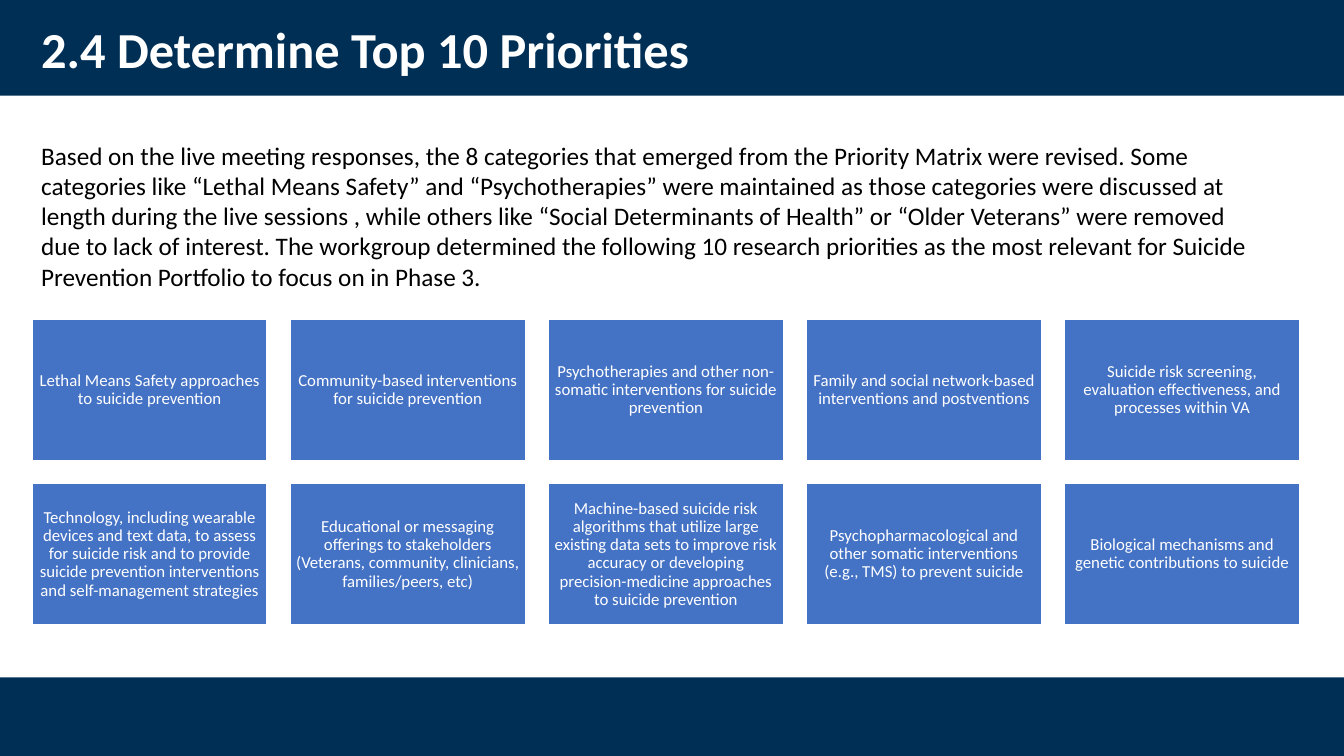
from pptx import Presentation
from pptx.dml.color import RGBColor
from pptx.enum import shapes, text
from pptx.util import Inches, Pt

TITLE = "2.4 Determine Top 10 Priorities"
INTRO = (
    "Based on the live meeting responses, the 8 categories that emerged from the "
    "Priority Matrix were revised. Some categories like “Lethal Means Safety” and "
    "“Psychotherapies” were maintained as those categories were discussed at length "
    "during the live sessions , while others like “Social Determinants of Health” or "
    "“Older Veterans” were removed due to lack of interest. The workgroup determined "
    "the following 10 research priorities as the most relevant for Suicide Prevention "
    "Portfolio to focus on in Phase 3."
)
PRIORITIES = [
    "Lethal Means Safety approaches to suicide prevention",
    "Community-based interventions for suicide prevention",
    "Psychotherapies and other non-somatic interventions for suicide prevention",
    "Family and social network-based interventions and postventions",
    "Suicide risk screening, evaluation effectiveness, and processes within VA",
    "Technology, including wearable devices and text data, to assess for suicide risk "
    "and to provide suicide prevention interventions and self-management strategies",
    "Educational or messaging offerings to stakeholders (Veterans, community, "
    "clinicians, families/peers, etc)",
    "Machine-based suicide risk algorithms that utilize large existing data sets to "
    "improve risk accuracy or developing precision-medicine approaches to suicide "
    "prevention",
    "Psychopharmacological and other somatic interventions (e.g., TMS) to prevent suicide",
    "Biological mechanisms and genetic contributions to suicide",
]

NAVY = RGBColor(0x00, 0x2F, 0x56)
BLUE = RGBColor(0x44, 0x72, 0xC4)
WHITE = RGBColor(0xFF, 0xFF, 0xFF)
BLACK = RGBColor(0x00, 0x00, 0x00)

SLIDE_W, SLIDE_H = 13.33, 7.5
BARS = [(0, 0.95), (6.72, 0.78)]
COLUMNS = 5
CARD_LEFT, CARD_TOP, CARD_W, CARD_H = 0.32, 3.17, 2.33, 1.4
GAP = 0.23

TITLE_FONT = {"name": "Calibri", "size": Pt(36), "bold": True, "color": WHITE}
INTRO_FONT = {"name": "Calibri", "size": Pt(18), "color": BLACK}
CARD_FONT = {"name": "Calibri", "size": Pt(12), "color": WHITE}
CARD_FRAME = {f"margin_{side}": Inches(0.05) for side in ("left", "top", "right", "bottom")}


def add_rect(slide, box, fill, line=None):
    sp = slide.shapes.add_shape(shapes.MSO_SHAPE.RECTANGLE, *map(Inches, box))
    sp.shadow.inherit = False
    sp.fill.solid()
    sp.fill.fore_color.rgb = fill
    if line is None:
        sp.line.fill.background()
    else:
        sp.line.color.rgb = line
        sp.line.width = Pt(1)
    return sp


def write(sp, words, font, anchor, align, spacing=1.0, frame=None):
    tf = sp.text_frame
    for key, value in {"word_wrap": True, "vertical_anchor": anchor, **(frame or {})}.items():
        setattr(tf, key, value)
    p = tf.paragraphs[0]
    p.alignment = align
    p.line_spacing = spacing
    r = p.add_run()
    r.text = words
    for key, value in font.items():
        if key == "color":
            r.font.color.rgb = value
        else:
            setattr(r.font, key, value)


def main():
    prs = Presentation()
    prs.slide_width, prs.slide_height = Inches(SLIDE_W), Inches(SLIDE_H)
    s = prs.slides.add_slide(prs.slide_layouts[6])
    middle, top = text.MSO_ANCHOR.MIDDLE, text.MSO_ANCHOR.TOP
    left, center = text.PP_ALIGN.LEFT, text.PP_ALIGN.CENTER

    for y, height in BARS:
        add_rect(s, (0, y, SLIDE_W, height), NAVY)

    title = s.shapes.add_textbox(*map(Inches, (0.31, 0.18, 12.58, 0.68)))
    write(title, TITLE, TITLE_FONT, middle, left, 0.9)

    for i, priority in enumerate(PRIORITIES):
        row, col = divmod(i, COLUMNS)
        x = CARD_LEFT + col * (CARD_W + GAP)
        y = CARD_TOP + row * (CARD_H + GAP)
        card = add_rect(s, (x, y, CARD_W, CARD_H), BLUE, WHITE)
        write(card, priority, CARD_FONT, middle, center, 0.9, CARD_FRAME)

    intro = s.shapes.add_textbox(*map(Inches, (0.31, 1.34, 12.39, 1.62)))
    write(intro, INTRO, INTRO_FONT, top, left)

    prs.save("out.pptx")


if __name__ == "__main__":
    main()
